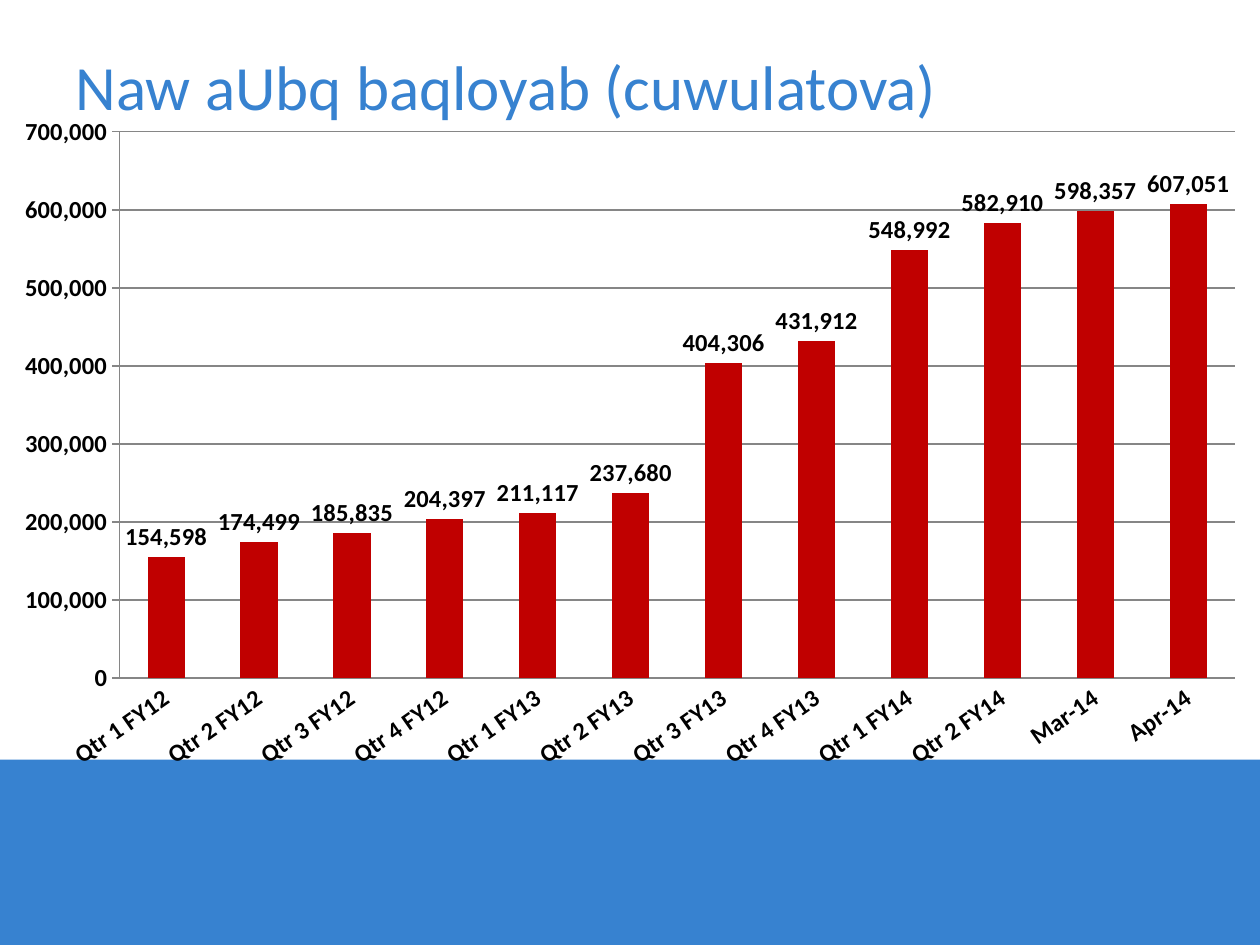
import pptx
import pptx.chart.data
import pptx.dml.color
import pptx.enum.chart
import pptx.enum.shapes
import pptx.enum.text
import pptx.oxml
import pptx.oxml.ns
import pptx.util
from pptx.util import Inches

QTRS = [f"Qtr {q} FY{y}" for y in (12, 13, 14) for q in (1, 2, 3, 4)]
CATS = QTRS[:10] + ["Mar-14", "Apr-14"]
VALS = [154598, 174499, 185835, 204397, 211117, 237680,
        404306, 431912, 548992, 582910, 598357, 607051]


def rgb(hex):
    return pptx.dml.color.RGBColor.from_string(hex)


class Deck:
    face, blue, red, black, gray = "Calibri", "3782D0", "C00000", "000000", "868686"

    def __init__(self):
        self.prs = pptx.Presentation()
        self.prs.slide_width, self.prs.slide_height = Inches(10), Inches(7.5)
        self.slide = self.prs.slides.add_slide(self.prs.slide_layouts[5])

    def style(self, font, size, color, bold=False):
        vals = {"name": self.face, "size": pptx.util.Pt(size), "bold": bold}
        for key, val in vals.items():
            setattr(font, key, val)
        font.color.rgb = rgb(color)

    def rule(self, line):
        line.color.rgb = rgb(self.gray)
        line.width = pptx.util.Pt(0.75)

    def band(self, *box):
        kind = pptx.enum.shapes.MSO_SHAPE.RECTANGLE
        shape = self.slide.shapes.add_shape(kind, *map(Inches, box))
        shape.shadow.inherit = False
        shape.fill.solid()
        shape.fill.fore_color.rgb = rgb(self.blue)
        shape.line.fill.background()
        # Send behind the title
        self.slide.shapes._spTree.insert(2, shape._element)

    def title(self, text, *box):
        shape = self.slide.shapes.title
        for key, val in zip(("left", "top", "width", "height"), box):
            setattr(shape, key, Inches(val))
        frame = shape.text_frame
        frame.text = text
        frame.vertical_anchor = pptx.enum.text.MSO_ANCHOR.MIDDLE
        para = frame.paragraphs[0]
        para.alignment = pptx.enum.text.PP_ALIGN.LEFT
        self.style(para.runs[0].font, 36, self.blue)

    def chart(self, cats, vals, *box):
        enum = pptx.enum.chart
        data = pptx.chart.data.CategoryChartData(number_format="#,##0")
        data.categories = cats
        data.add_series("Series 1", vals)
        chart = self.slide.shapes.add_chart(
            enum.XL_CHART_TYPE.COLUMN_CLUSTERED, *map(Inches, box), data).chart
        chart.has_legend = chart.has_title = False
        self.style(chart.font, 10, self.black)

        # Columns and their values
        plot = chart.plots[0]
        plot.gap_width, plot.vary_by_categories = 150, False
        fill = plot.series[0].format.fill
        fill.solid()
        fill.fore_color.rgb = rgb(self.red)
        tags = plot.series[0].data_labels
        tags.show_value = True
        tags.number_format, tags.number_format_is_linked = "#,##0", False
        tags.position = enum.XL_LABEL_POSITION.OUTSIDE_END
        self.style(tags.font, 14, self.black, True)

        # Axes
        cat, val = chart.category_axis, chart.value_axis
        for axis, tick in ((cat, "NONE"), (val, "OUTSIDE")):
            axis.major_tick_mark = enum.XL_TICK_MARK[tick]
            axis.minor_tick_mark = enum.XL_TICK_MARK.NONE
            self.style(axis.tick_labels.font, 14, self.black, True)
            self.rule(axis.format.line)
        val.minimum_scale, val.maximum_scale, val.major_unit = 0, 700000, 100000
        val.tick_labels.number_format = "#,##0"
        val.tick_labels.number_format_is_linked = False
        val.has_major_gridlines = True
        self.rule(val.major_gridlines.format.line)
        # Slant the category labels by 35 degrees
        cat._element.find(".//" + pptx.oxml.ns.qn("a:bodyPr")).set("rot", "-2100000")
        self.inner(chart, x=0.095, y=0.04, w=0.885, h=0.8)

    def inner(self, chart, **area):
        """Fix the plot area, as fractions of the chart."""
        sizes = "".join(f'<c:{key} val="{val}"/>' for key, val in area.items())
        node = pptx.oxml.parse_xml(
            f'<c:layout {pptx.oxml.ns.nsdecls("c")}><c:manualLayout>'
            '<c:layoutTarget val="inner"/><c:xMode val="edge"/><c:yMode val="edge"/>'
            f'{sizes}</c:manualLayout></c:layout>')
        plot = chart._chartSpace.chart.plotArea
        for old in plot.findall(pptx.oxml.ns.qn("c:layout")):
            plot.remove(old)
        plot.insert(0, node)


def main():
    deck = Deck()
    deck.band(0, 6.03, 10, 1.47)
    deck.title("Naw aUbq baqloyab (cuwulatova)", 0.5, 0.29, 9, 0.77)
    deck.chart(CATS, VALS, 0, 0.83, 10, 5.42)
    deck.prs.save("out.pptx")


if __name__ == "__main__":
    main()
